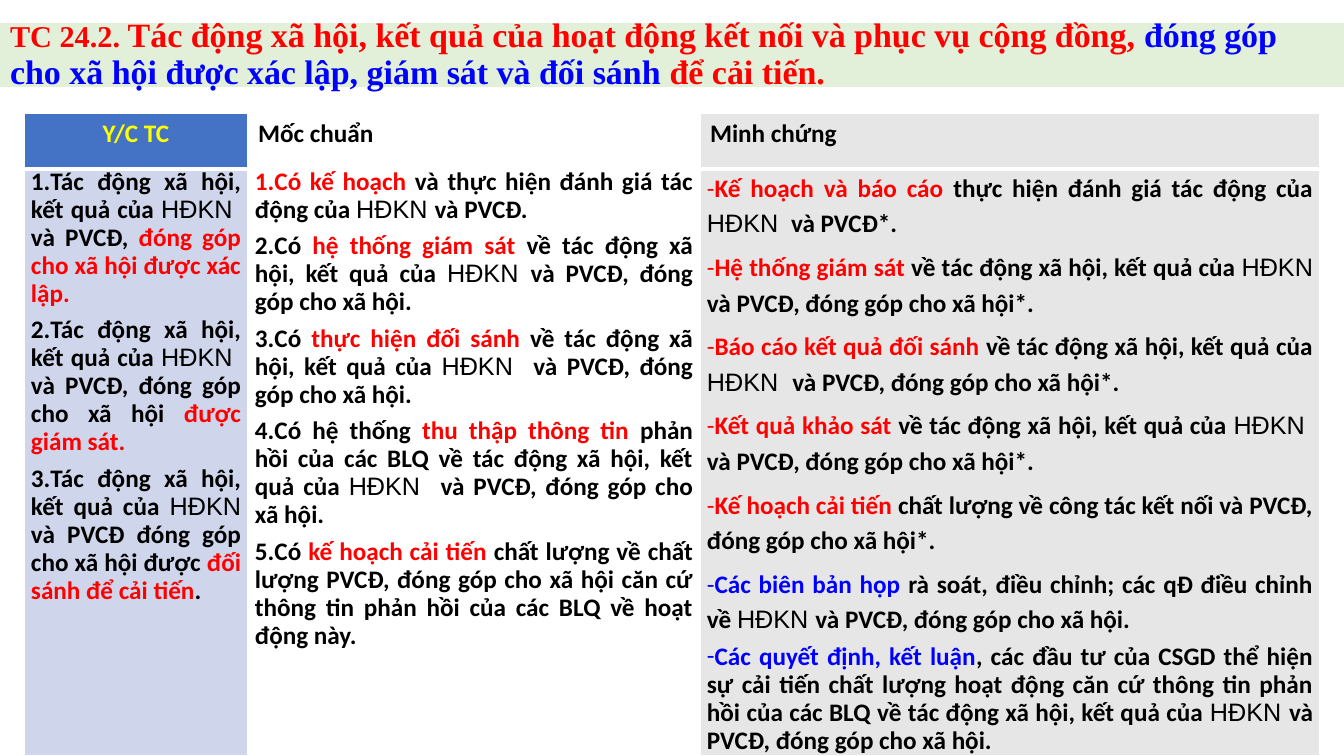
from dataclasses import dataclass

import pptx
import pptx.dml.color
import pptx.enum.text
import pptx.oxml
import pptx.oxml.ns
import pptx.oxml.xmlchemy
import pptx.util
from lxml import etree

EMU_PER_PX = 914400 / 100.8
ALIGN = pptx.enum.text.PP_ALIGN


@dataclass(frozen=True)
class Theme:
    white: str = "FFFFFF"
    black: str = "000000"
    red: str = "FF0000"
    blue: str = "0000FF"
    yellow: str = "FFFF00"
    title_band: str = "E2F0D9"
    header_blue: str = "4472C4"
    pale_blue: str = "CFD5EA"
    grey: str = "E7E6E6"
    title_font: str = "Times New Roman"
    body_font: str = "Calibri"
    term_font: str = "Arial"
    code_size: float = 21.6
    title_size: float = 24.3
    body_size: float = 18


THEME = Theme()


@dataclass(frozen=True)
class Span:
    text: str
    color: str = THEME.black
    font: str = THEME.body_font
    bold: bool = True


def red(text):
    return Span(text, THEME.red)


def blue(text):
    return Span(text, THEME.blue)


def term(text="HĐKN "):
    return Span(text, font=THEME.term_font, bold=False)


TITLE = [
    (THEME.code_size, THEME.red, "TC 24.2. "),
    (THEME.title_size, THEME.red,
     "Tác động xã hội, kết quả của hoạt động kết nối và phục vụ cộng đồng, "),
    (THEME.title_size, THEME.blue, "đóng góp cho xã hội được xác lập, giám sát và đối sánh "),
    (THEME.title_size, THEME.red, "để cải tiến."),
]

REQUIREMENTS = [
    ["Tác động xã hội, kết quả của ", term("HĐKN  "), "và PVCĐ, ",
     red("đóng góp cho xã hội được xác lập.")],
    ["Tác động xã hội, kết quả của ", term("HĐKN  "), "và PVCĐ, đóng góp cho xã hội ",
     red("được giám sát.")],
    ["Tác động xã hội, kết quả của ", term(), "và PVCĐ đóng góp cho xã hội được ",
     red("đối sánh để cải tiến"), "."],
]

BENCHMARKS = [
    [red("Có kế hoạch "), "và thực hiện đánh giá tác động của ", term(), "và PVCĐ."],
    ["Có ", red("hệ thống giám sát "), "về tác động xã hội, kết quả của ", term(),
     "và PVCĐ, đóng góp cho xã hội."],
    ["Có ", red("thực hiện đối sánh "), "về tác động xã hội, kết quả của ", term(),
     " và PVCĐ, đóng góp cho xã hội. "],
    ["Có hệ thống ", red("thu thập thông tin "),
     "phản hồi của các BLQ về tác động xã hội, kết quả của ", term("HĐKN  "),
     "và PVCĐ, đóng góp cho xã hội."],
    ["Có ", red("kế hoạch cải tiến"),
     " chất lượng về chất lượng PVCĐ, đóng góp cho xã hội căn cứ thông tin "
     "phản hồi của các BLQ về hoạt động này."],
]

EVIDENCE = [
    [red("Kế hoạch và báo cáo "), "thực hiện đánh giá tác động của ", term(), " và PVCĐ*."],
    [red("Hệ thống giám sát "), "về tác động xã hội, kết quả của ", term(),
     "và PVCĐ, đóng góp cho xã hội*."],
    [red("Báo cáo kết quả đối sánh "), "về tác động xã hội, kết quả của ", term("HĐKN  "),
     "và PVCĐ, đóng góp cho xã hội*."],
    [red("Kết quả khảo sát "), "về tác động xã hội, kết quả của ", term(),
     " và PVCĐ, đóng góp cho xã hội*."],
    [red("Kế hoạch cải tiến"),
     " chất lượng về công tác kết nối và PVCĐ, đóng góp cho xã hội*. "],
    [blue("Các biên bản họp "), "rà soát, điều chỉnh; các qĐ điều chỉnh về ", term(),
     "và PVCĐ, đóng góp cho xã hội. "],
    [blue("Các quyết định, kết luận"),
     ", các đầu tư của CSGD thể hiện sự cải tiến chất lượng hoạt động căn cứ thông tin "
     "phản hồi của các BLQ về tác động xã hội, kết quả của ", term(),
     "và PVCĐ, đóng góp cho xã hội."],
]

EXACT = pptx.util.Pt(20)
LOOSE = 1.15

# Column: width in px, header span, header alignment, header fill, body fill,
# bullet tag and attributes, items, line spacing of each item
COLUMNS = [
    (224, Span("Y/C TC", THEME.yellow), ALIGN.CENTER, THEME.header_blue, THEME.pale_blue,
     ("a:buAutoNum", {"type": "arabicPeriod"}), REQUIREMENTS, [EXACT] * 3),
    (452, Span("Mốc chuẩn"), ALIGN.LEFT, THEME.white, THEME.white,
     ("a:buAutoNum", {"type": "arabicPeriod"}), BENCHMARKS, [EXACT] * 5),
    (620, Span("Minh chứng"), ALIGN.LEFT, THEME.grey, THEME.grey,
     ("a:buChar", {"char": "-"}), EVIDENCE, [LOOSE] * 6 + [EXACT]),
]


def px(length):
    return pptx.util.Emu(round(length * EMU_PER_PX))


def rgb(color):
    return pptx.dml.color.RGBColor.from_string(color)


def add_child(parent, tag, attributes):
    return etree.SubElement(parent, pptx.oxml.ns.qn(tag), attributes)


def paint(target, color):
    target.fill.solid()
    target.fill.fore_color.rgb = rgb(color)


def add_span(para, span):
    run = para.add_run()
    run.text = span.text
    run.font.name = span.font
    run.font.bold = span.bold
    run.font.color.rgb = rgb(span.color)
    return run


def add_bullet(para, tag, attributes):
    properties = para._p.get_or_add_pPr()
    properties.set("marL", "0")
    properties.set("indent", "0")
    add_child(properties, "a:buFont", {"typeface": THEME.body_font})
    add_child(properties, tag, attributes)


def style_cell(cell, color, bottom_width):
    properties = cell._tc.get_or_add_tcPr()
    for side, width in (("L", 1), ("R", 1), ("T", 1), ("B", bottom_width)):
        line = add_child(properties, f"a:ln{side}", {"w": str(pptx.util.Pt(width))})
        fill = add_child(line, "a:solidFill", {})
        add_child(fill, "a:srgbClr", {"val": THEME.white})
    paint(cell, color)


def fill_header(cell, span, alignment, color):
    style_cell(cell, color, 3)
    para = cell.text_frame.paragraphs[0]
    para.alignment = alignment
    para.font.size = pptx.util.Pt(THEME.body_size)
    add_span(para, span)


def fill_list(cell, color, bullet, items, spacings):
    style_cell(cell, color, 1)
    cell.margin_left = cell.margin_right = px(7)
    cell.margin_top = cell.margin_bottom = 0
    frame = cell.text_frame
    for index, (item, spacing) in enumerate(zip(items, spacings)):
        para = frame.add_paragraph() if index else frame.paragraphs[0]
        para.alignment = ALIGN.JUSTIFY
        para.line_spacing = spacing
        para.space_after = pptx.util.Pt(6)
        add_bullet(para, *bullet)
        para.font.size = pptx.util.Pt(THEME.body_size)
        for part in item:
            add_span(para, Span(part) if isinstance(part, str) else part)


def add_title(page):
    title = page.shapes.title
    title.left, title.top, title.width, title.height = px(0), px(23), px(1344), px(64)
    paint(title, THEME.title_band)
    frame = title.text_frame
    frame.word_wrap = True
    frame.auto_size = pptx.enum.text.MSO_AUTO_SIZE.NONE
    frame.vertical_anchor = pptx.enum.text.MSO_ANCHOR.MIDDLE
    para = frame.paragraphs[0]
    para.alignment = ALIGN.LEFT
    para.line_spacing = 0.9
    for size, color, text in TITLE:
        run = add_span(para, Span(text, color, THEME.title_font))
        run.font.size = pptx.util.Pt(size)


def add_criteria_table(page):
    table = page.shapes.add_table(2, len(COLUMNS), px(24), px(113), px(1296), px(618)).table
    table.first_row = table.horz_banding = False
    table.rows[0].height, table.rows[1].height = px(56), px(563)
    for index, column in enumerate(COLUMNS):
        width, header, alignment, header_fill, body_fill, bullet, items, spacings = column
        table.columns[index].width = px(width)
        fill_header(table.cell(0, index), header, alignment, header_fill)
        fill_list(table.cell(1, index), body_fill, bullet, items, spacings)


def main():
    deck = pptx.Presentation()
    deck.slide_width, deck.slide_height = px(1344), px(756)
    page = deck.slides.add_slide(deck.slide_layouts[5])  # title-only layout
    add_title(page)
    add_criteria_table(page)
    deck.save("out.pptx")


if __name__ == "__main__":
    main()
